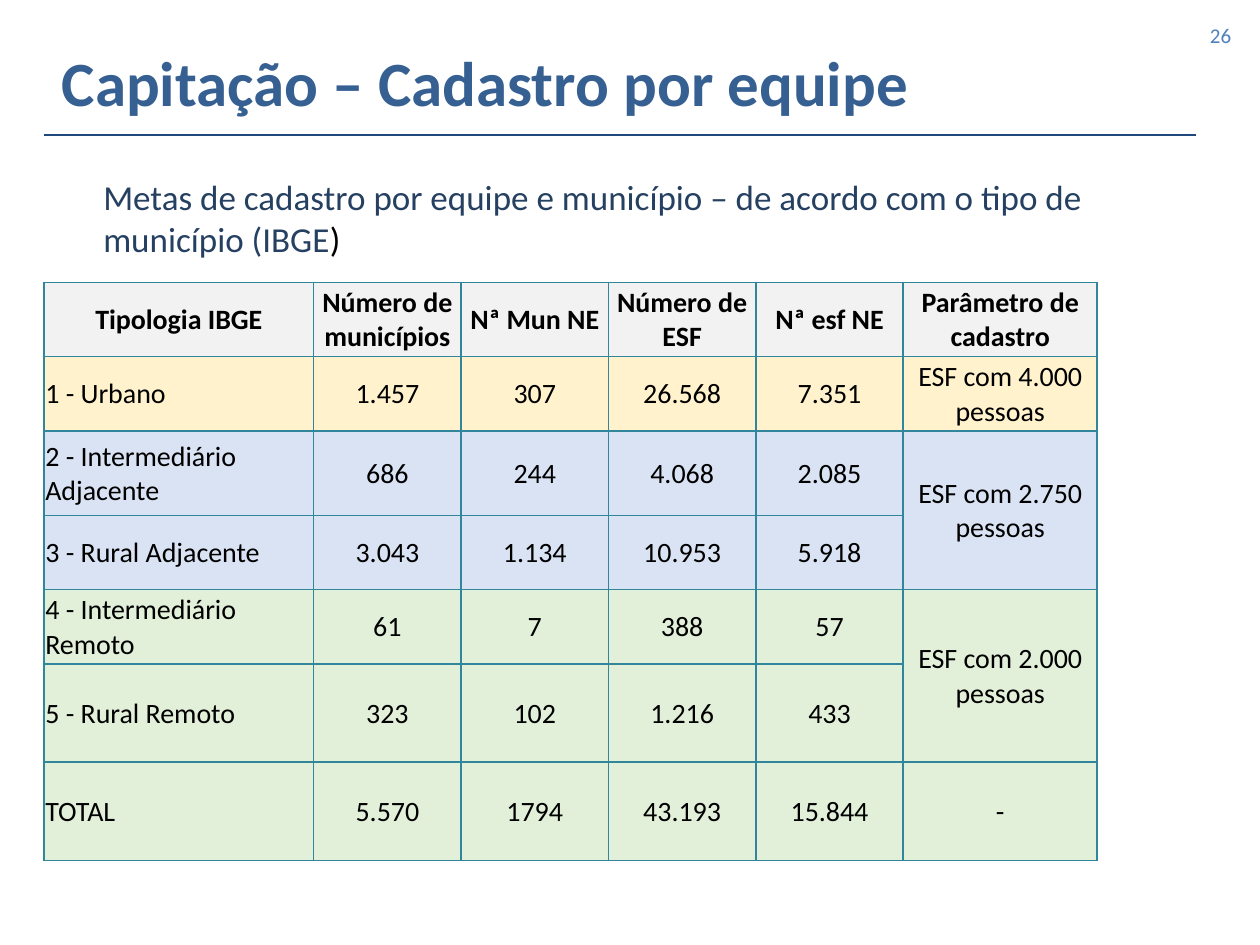
from lxml import etree
from pptx import Presentation
from pptx.dml.color import RGBColor
from pptx.enum.shapes import MSO_CONNECTOR
from pptx.enum.text import MSO_ANCHOR, MSO_AUTO_SIZE, PP_ALIGN
from pptx.oxml.ns import qn
from pptx.util import Inches, Pt

LEFT, MID, RIGHT = PP_ALIGN.LEFT, PP_ALIGN.CENTER, PP_ALIGN.RIGHT
CENTER = MSO_ANCHOR.MIDDLE
FIXED = MSO_AUTO_SIZE.NONE
LINE = MSO_CONNECTOR.STRAIGHT

COLORS = {
    "title": "376092", "lead": "254061", "text": "000000",
    "rule": "1F497D", "page": "4F81BD", "edge": "31869B",
    "head": "F2F2F2", "urban": "FFF2CC", "near": "DAE3F3", "far": "E2F0D9",
}
WIDTHS = [2.14] + [1.17] * 4 + [1.54]
HEIGHTS = [0.59, 0.59, 0.67, 0.59, 0.59, 0.78, 0.78]
ROWS = [
    ("head", ["Tipologia IBGE", "Número de municípios", "Nª Mun NE",
              "Número de ESF", "Nª esf NE", "Parâmetro de cadastro"]),
    ("urban", ["1 - Urbano", "1.457", "307", "26.568", "7.351",
               "ESF com 4.000 pessoas"]),
    ("near", ["2 - Intermediário Adjacente", "686", "244", "4.068", "2.085",
              "ESF com 2.750 pessoas"]),
    ("near", ["3 - Rural Adjacente", "3.043", "1.134", "10.953", "5.918", ""]),
    ("far", ["4 - Intermediário Remoto", "61", "7", "388", "57",
             "ESF com 2.000 pessoas"]),
    ("far", ["5 - Rural Remoto", "323", "102", "1.216", "433", ""]),
    ("far", ["TOTAL", "5.570", "1794", "43.193", "15.844", "-"]),
]
MERGES = [(2, 3), (4, 5)]


def rgb(name):
    return RGBColor.from_string(COLORS[name])


def style(para, size, color, bold=False, align=LEFT):
    para.alignment = align
    for run in para.runs:
        font = run.font
        font.name, font.size, font.bold = "Calibri", Pt(size), bold
        font.color.rgb = rgb(color)


def add_text(slide, box, text, size, color, align=LEFT, inset=0.1):
    shape = slide.shapes.add_textbox(*map(Inches, box))
    frame = shape.text_frame
    frame.word_wrap = True
    frame.vertical_anchor = CENTER
    frame.margin_left = frame.margin_right = Inches(inset)
    frame.margin_top = frame.margin_bottom = Inches(inset / 2)
    para = frame.paragraphs[0]
    para.text = text
    style(para, size, color, align=align)
    return para


def add_title(slide, box):
    title = slide.shapes.title
    title.left, title.top, title.width, title.height = map(Inches, box)
    frame = title.text_frame
    frame.text = "Capitação – Cadastro por equipe"
    frame.auto_size = FIXED
    frame.vertical_anchor = CENTER
    para = frame.paragraphs[0]
    para.line_spacing = 0.9
    style(para, 36, "title", True)


def add_rule(slide, left, top, width):
    rule = slide.shapes.add_connector(
        LINE, Inches(left), Inches(top), Inches(left + width), Inches(top))
    rule.line.color.rgb = rgb("rule")
    rule.line.width = Pt(1)
    etree.SubElement(rule._element.spPr, qn("a:effectLst"))


def add_lead(slide, box):
    para = add_text(
        slide, box,
        "Metas de cadastro por equipe e município – de acordo com o tipo de "
        "município (IBGE", 20, "lead", inset=0)
    run = para.add_run()
    run.text = ")"
    font = run.font
    font.name, font.size = "Calibri", Pt(20)
    font.color.rgb = rgb("text")


def add_edges(cell):
    props = cell._tc.get_or_add_tcPr()
    for spot, side in enumerate(("lnL", "lnR", "lnT", "lnB")):
        edge = etree.Element(qn("a:" + side), w=str(Pt(1)))
        fill = etree.SubElement(edge, qn("a:solidFill"))
        etree.SubElement(fill, qn("a:srgbClr"), val=COLORS["edge"])
        props.insert(spot, edge)


def fill_cell(cell, text, shade, bold, align):
    cell.fill.solid()
    cell.fill.fore_color.rgb = rgb(shade)
    cell.vertical_anchor = CENTER
    cell.margin_left = cell.margin_right = cell.margin_top = Inches(0.01)
    cell.margin_bottom = 0
    add_edges(cell)
    para = cell.text_frame.paragraphs[0]
    if text:
        para.text = text
    para.font.size = Pt(16)
    style(para, 16, "text", bold, align)


def add_goals(slide, left, top):
    box = (left, top, sum(WIDTHS), sum(HEIGHTS))
    table = slide.shapes.add_table(
        len(ROWS), len(WIDTHS), *map(Inches, box)).table
    for col, width in zip(table.columns, WIDTHS):
        col.width = Inches(width)
    for row, height in zip(table.rows, HEIGHTS):
        row.height = Inches(height)
    for r, (shade, texts) in enumerate(ROWS):
        for c, text in enumerate(texts):
            align = LEFT if r and not c else MID
            fill_cell(table.cell(r, c), text, shade, r == 0, align)
    last = len(WIDTHS) - 1
    for start, end in MERGES:
        table.cell(start, last).merge(table.cell(end, last))


def main():
    deck = Presentation()
    deck.slide_width, deck.slide_height = Inches(10), Inches(7.5)
    slide = deck.slides.add_slide(deck.slide_layouts[5])
    add_title(slide, (0.39, 0.29, 9.6, 0.78))
    add_lead(slide, (0.82, 1.39, 8.74, 0.67))
    add_rule(slide, 0.35, 1.07, 9.14)
    add_goals(slide, 0.35, 2.24)
    add_text(slide, (7.54, 0.08, 2.33, 0.4), "26", 12, "page", RIGHT)
    deck.save("out.pptx")


if __name__ == "__main__":
    main()
